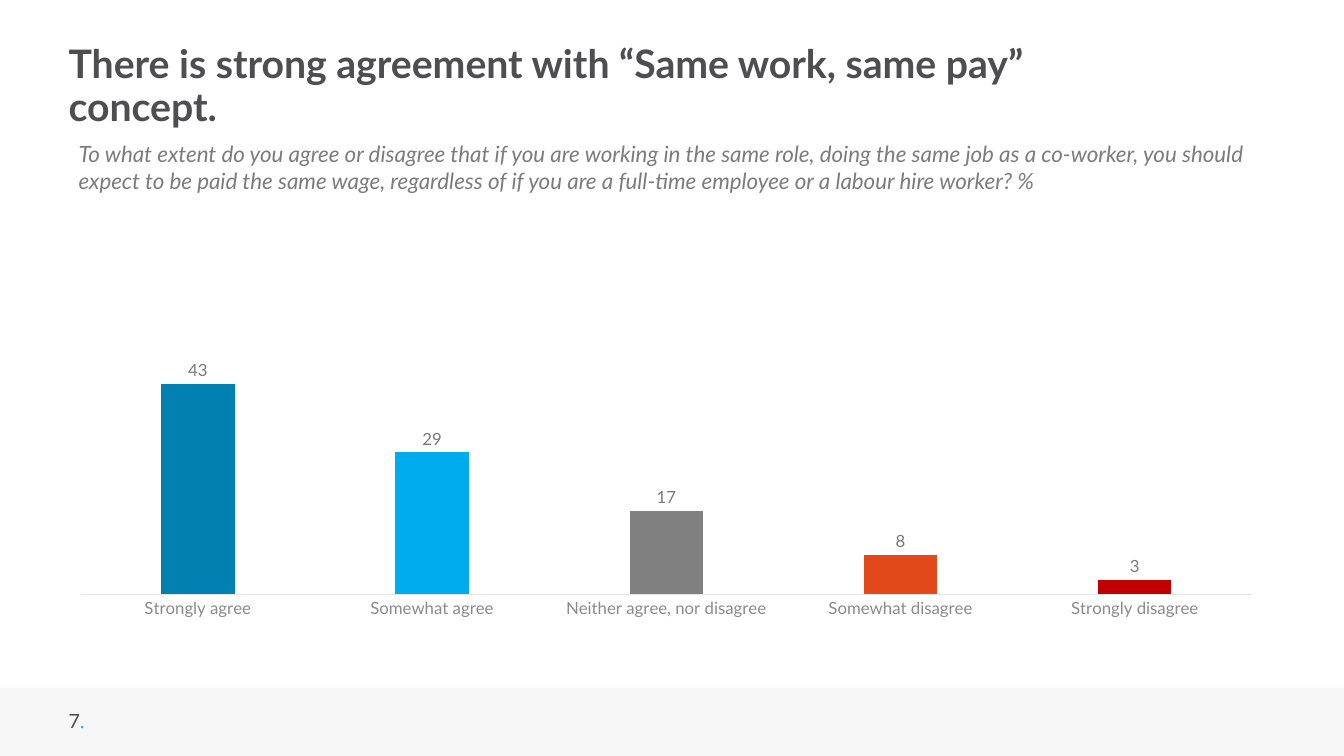
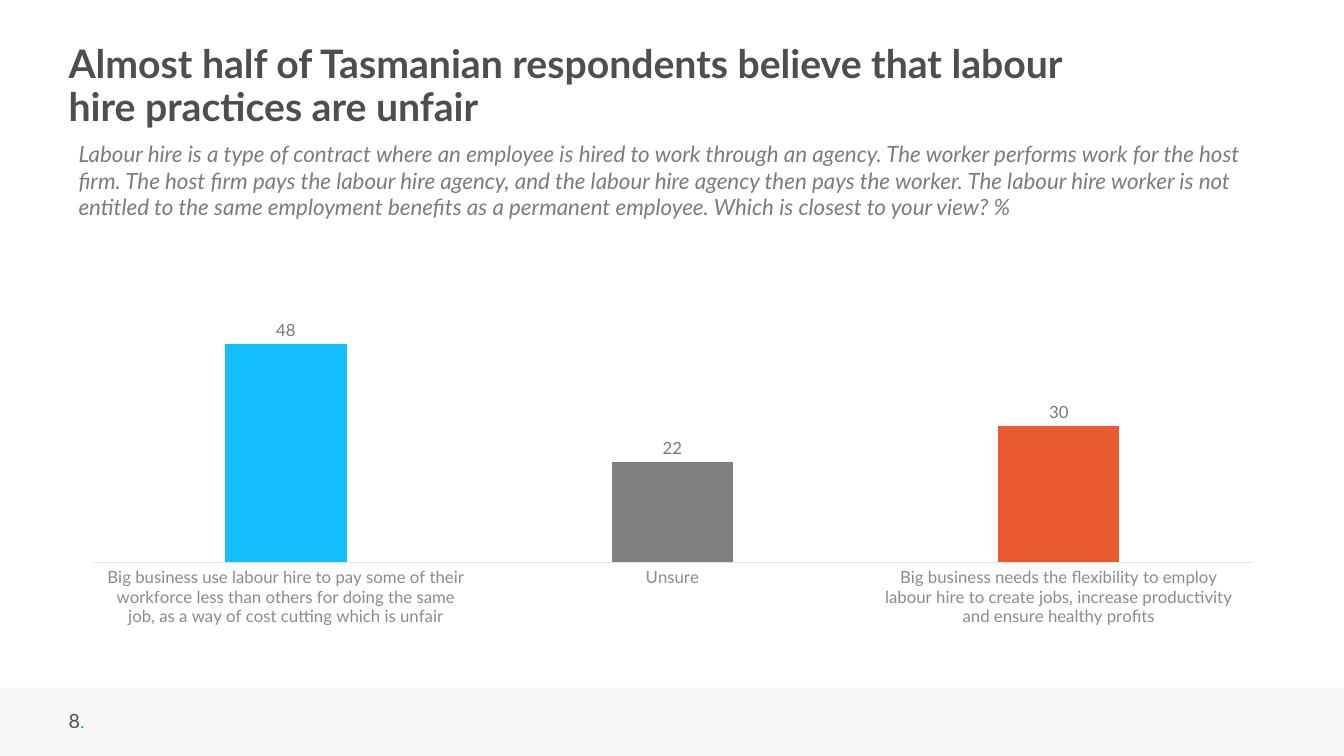
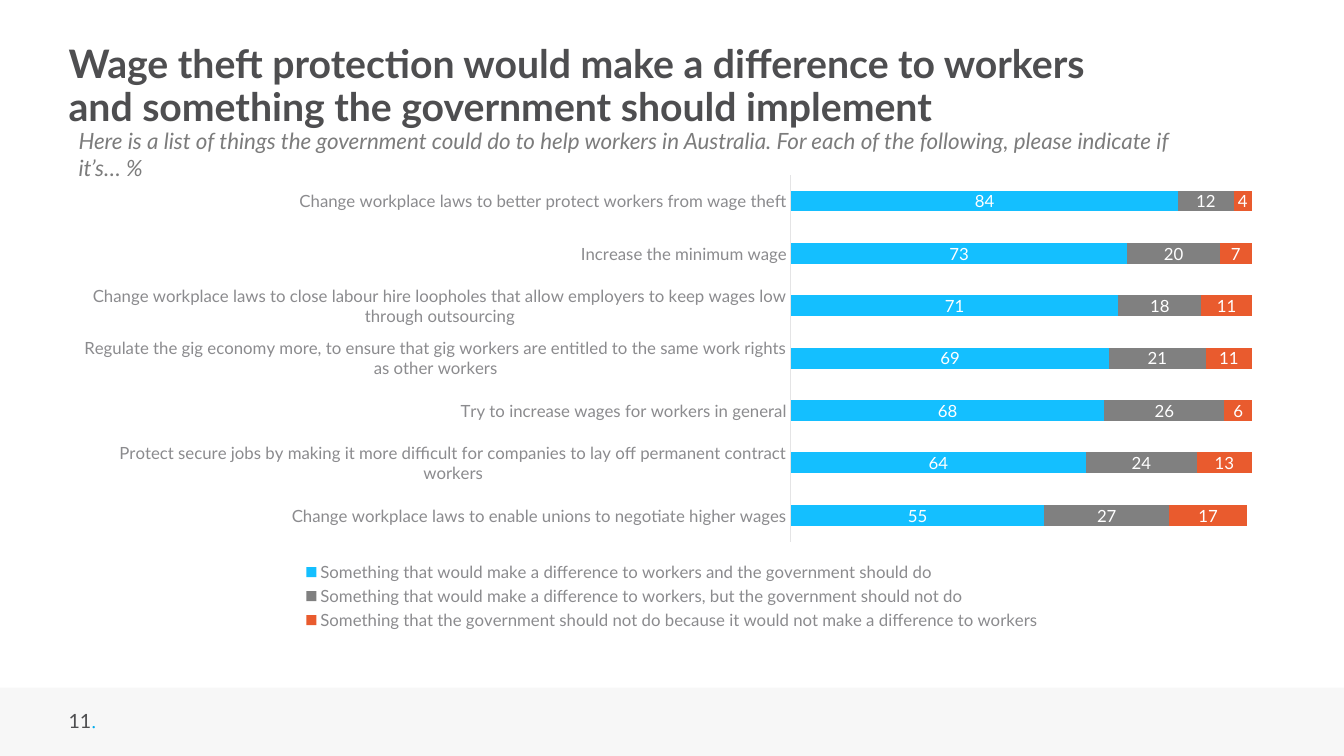
"""Build three survey slides on labour hire and wages, each with one chart."""
import dataclasses

import pptx
import pptx.chart.data
import pptx.dml.color
import pptx.enum.chart
import pptx.enum.shapes
import pptx.enum.text
import pptx.oxml
import pptx.oxml.ns
import pptx.util

Cm = pptx.util.Cm
Pt = pptx.util.Pt
Kind = pptx.enum.chart.XL_CHART_TYPE
Spot = pptx.enum.chart.XL_LABEL_POSITION


@dataclasses.dataclass(frozen=True)
class Theme:
    face: str = "Lato"
    dot_face: str = "Times New Roman"
    ink: str = "4E4E50"
    ask: str = "7C7C7C"
    axis: str = "8B8B8E"
    value: str = "79797D"
    rule: str = "E4E4E5"
    band: str = "F7F7F7"
    white: str = "FFFFFF"
    navy: str = "0081B2"
    blue: str = "00ACED"
    sky: str = "14BFFF"
    grey: str = "808080"
    rust: str = "E2491A"
    coral: str = "E95B2E"
    red: str = "C00000"
    title_size: int = 28
    ask_size: int = 16
    foot_size: int = 14
    label_size: int = 12
    base_size: int = 10


theme = Theme()


def style(font, size, tint, face=theme.face):
    font.name = face
    font.size = Pt(size)
    font.color.rgb = pptx.dml.color.RGBColor.from_string(tint)


def write(slide, box, runs, inset=True):
    frame = slide.shapes.add_textbox(*map(Cm, box)).text_frame
    frame.word_wrap = True
    if not inset:
        frame.margin_left = frame.margin_right = 0
        frame.margin_top = frame.margin_bottom = 0
    for text, size, tint, face in runs:
        run = frame.paragraphs[0].add_run()
        run.text = text
        style(run.font, size, tint, face)
    return frame


pages = [
    {
        "number": "7",
        "title": "There is strong agreement with “Same work, same pay” concept.",
        "ask": "To what extent do you agree or disagree that if you are working in the same role, "
               "doing the same job as a co-worker, you should expect to be paid the same wage, "
               "regardless of if you are a full-time employee or a labour hire worker? %",
        "ask_box": (1.73, 3.4, 30, 1.63),
        "kind": Kind.COLUMN_CLUSTERED,
        "top": 5.94,
        "most": 70,
        "gap": 219,
        "lap": -27,
        "groups": ["Strongly agree", "Somewhat agree", "Neither agree, nor disagree",
                   "Somewhat disagree", "Strongly disagree"],
        "series": [("Series 1", [43, 29, 17, 8, 3])],
        "tints": [theme.navy, theme.blue, theme.grey, theme.rust, theme.red],
        "plot": {"x": 0.01, "y": 0.04, "w": 0.97, "h": 0.86},
    },
    {
        "number": "8",
        "title": "Almost half of Tasmanian respondents believe that labour hire practices are unfair",
        "ask": "Labour hire is a type of contract where an employee is hired to work through an agency. "
               "The worker performs work for the host firm. The host firm pays the labour hire agency, "
               "and the labour hire agency then pays the worker. The labour hire worker is not entitled "
               "to the same employment benefits as a permanent employee. Which is closest to your view? %",
        "ask_box": (1.73, 3.4, 30, 2.31),
        "kind": Kind.COLUMN_CLUSTERED,
        "top": 5.94,
        "most": 70,
        "gap": 219,
        "lap": -27,
        "groups": ["Big business use labour hire to pay some of their workforce less than others "
                   "for doing the same job, as a way of cost cutting which is unfair",
                   "Unsure",
                   "Big business needs the flexibility to employ labour hire to create jobs, "
                   "increase productivity and ensure healthy profits"],
        "series": [("Series 1", [48, 22, 30])],
        "tints": [theme.sky, theme.grey, theme.coral],
        "plot": None,
    },
    {
        "number": "11",
        "title": "Wage theft protection would make a difference to workers "
                 "and something the government should implement",
        "ask": "Here is a list of things the government could do to help workers in Australia. "
               "For each of the following, please indicate if it’s… %",
        "ask_box": (1.73, 3.07, 29.18, 1.63),
        "kind": Kind.BAR_STACKED,
        "top": 4.17,
        "most": 100,
        "gap": 150,
        "lap": 100,
        "groups": ["Change workplace laws to better protect workers from wage theft",
                   "Increase the minimum wage",
                   "Change workplace laws to close labour hire loopholes that allow employers "
                   "to keep wages low through outsourcing",
                   "Regulate the gig economy more, to ensure that gig workers are entitled "
                   "to the same work rights as other workers",
                   "Try to increase wages for workers in general",
                   "Protect secure jobs by making it more difficult for companies "
                   "to lay off permanent contract workers",
                   "Change workplace laws to enable unions to negotiate higher wages"],
        "series": [
            ("Something that would make a difference to workers and the government should do",
             [84, 73, 71, 69, 68, 64, 55]),
            ("Something that would make a difference to workers, but the government should not do",
             [12, 20, 18, 21, 26, 24, 27]),
            ("Something that the government should not do because it would not make a difference to workers",
             [4, 7, 11, 11, 6, 13, 17]),
        ],
        "tints": [theme.sky, theme.grey, theme.coral],
        "plot": None,
    },
]

deck = pptx.Presentation()
deck.slide_width = Cm(33.87)
deck.slide_height = Cm(19.05)
base = Cm(15.98)

for page in pages:
    slide = deck.slides.add_slide(deck.slide_layouts[6])

    band = slide.shapes.add_shape(pptx.enum.shapes.MSO_SHAPE.RECTANGLE,
                                  0, Cm(17.33), deck.slide_width, Cm(1.72))
    band.shadow.inherit = False
    band.fill.solid()
    band.fill.fore_color.rgb = pptx.dml.color.RGBColor.from_string(theme.band)
    band.line.fill.background()

    write(slide, (1.73, 17.86, 1.37, 0.61),
          [(page["number"], theme.foot_size, theme.ink, theme.face),
           (".", theme.foot_size, theme.blue, theme.dot_face)], inset=False)

    title = write(slide, (1.73, 1.12, 26.16, 2.16),
                  [(page["title"], theme.title_size, theme.ink, theme.face)], inset=False)
    title.vertical_anchor = pptx.enum.text.MSO_ANCHOR.MIDDLE
    title.paragraphs[0].line_spacing = 0.9
    title.paragraphs[0].runs[0].font.bold = True

    data = pptx.chart.data.CategoryChartData()
    data.categories = page["groups"]
    for name, values in page["series"]:
        data.add_series(name, values)
    top = Cm(page["top"])
    chart = slide.shapes.add_chart(page["kind"], Cm(1.73), top, Cm(30.43), base - top, data).chart
    style(chart.font, theme.base_size, theme.ink)
    chart.has_title = False
    stacked = page["kind"] == Kind.BAR_STACKED

    chart.has_legend = stacked
    if stacked:
        chart.legend.position = pptx.enum.chart.XL_LEGEND_POSITION.BOTTOM
        chart.legend.include_in_layout = False
        style(chart.legend.font, theme.label_size, theme.axis)

    scale = chart.value_axis
    scale.minimum_scale = 0
    scale.maximum_scale = page["most"]
    scale.has_major_gridlines = False
    scale.visible = False

    axis = chart.category_axis
    axis.reverse_order = stacked
    axis.major_tick_mark = pptx.enum.chart.XL_TICK_MARK.NONE
    axis.format.line.color.rgb = pptx.dml.color.RGBColor.from_string(theme.rule)
    axis.format.line.width = Pt(0.75)
    style(axis.tick_labels.font, theme.label_size, theme.axis)

    plot = chart.plots[0]
    plot.vary_by_categories = False
    plot.gap_width = page["gap"]
    plot.overlap = page["lap"]

    for series in plot.series:
        labels = series.data_labels
        labels.show_value = True
        labels.position = Spot.CENTER if stacked else Spot.OUTSIDE_END
        style(labels.font, theme.label_size, theme.white if stacked else theme.value)

    if stacked:
        bars = list(plot.series)
    else:
        bars = [plot.series[0].points[spot] for spot in range(len(page["groups"]))]
    for bar, tint in zip(bars, page["tints"]):
        bar.format.fill.solid()
        bar.format.fill.fore_color.rgb = pptx.dml.color.RGBColor.from_string(tint)

    if page["plot"]:
        area = chart.element.xpath("c:chart/c:plotArea")[0]
        for old in area.xpath("c:layout"):
            area.remove(old)
        sides = "".join(f'<c:{side} val="{share}"/>' for side, share in page["plot"].items())
        area.insert(0, pptx.oxml.parse_xml(
            f'<c:layout {pptx.oxml.ns.nsdecls("c")}><c:manualLayout><c:layoutTarget val="inner"/>'
            f'<c:xMode val="edge"/><c:yMode val="edge"/>{sides}</c:manualLayout></c:layout>'))

    ask = write(slide, page["ask_box"], [(page["ask"], theme.ask_size, theme.ask, theme.face)])
    ask.paragraphs[0].runs[0].font.italic = True

deck.save("out.pptx")
